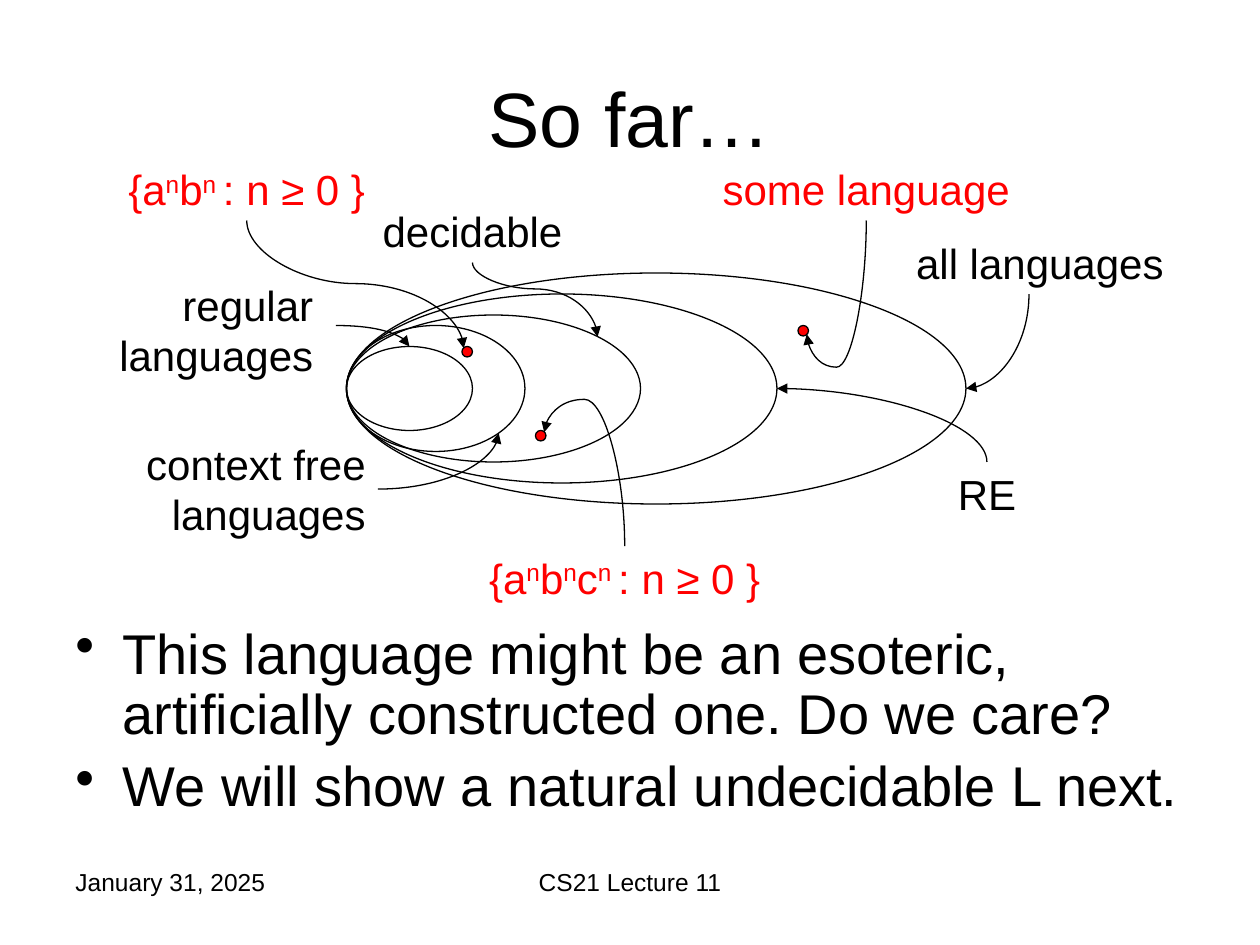
import pptx
import pptx.dml.color
import pptx.enum.shapes
import pptx.enum.text
import pptx.oxml.ns
import pptx.oxml.xmlchemy
import pptx.util

Pt = pptx.util.Pt
qn = pptx.oxml.ns.qn
OxmlElement = pptx.oxml.xmlchemy.OxmlElement
ALIGN = pptx.enum.text.PP_ALIGN
SHAPE = pptx.enum.shapes.MSO_SHAPE
COLORS = {"ink": "000000", "example": "FF0000"}
RGB = {key: pptx.dml.color.RGBColor.from_string(value) for key, value in COLORS.items()}
LINE_WIDTH = Pt(0.75)

deck = pptx.Presentation()
deck.slide_width, deck.slide_height = Pt(720), Pt(540)
slide = deck.slides.add_slide(deck.slide_layouts[6])


def add_text(box, paragraphs, size, align=ALIGN.LEFT, color="ink"):
    """Add a text box; in each paragraph, text between ^ marks is superscript."""
    frame = slide.shapes.add_textbox(*map(Pt, box)).text_frame
    frame.word_wrap = True
    for index, text in enumerate(paragraphs):
        paragraph = frame.paragraphs[0] if index == 0 else frame.add_paragraph()
        paragraph.alignment = align
        paragraph.font.name = "Arial"
        paragraph.font.size = Pt(size)
        paragraph.font.color.rgb = RGB[color]
        for position, piece in enumerate(text.split("^")):
            run = paragraph.add_run()
            run.text = piece
            if position % 2:
                run.font._element.set("baseline", "30000")
    return frame


def add_curved_arrow(start, end, leaves_vertically, bend=None):
    """Draw a quarter curve, or an S curve whose turning point is at bend."""
    (x1, y1), (x2, y2) = start, end
    rotation = 0
    if leaves_vertically:
        # The frame is turned a quarter, so its width and height swap.
        dx, dy = x2 - x1, y2 - y1
        middle_x, middle_y = (x1 + x2) / 2, (y1 + y2) / 2
        rotation = 90 if dx < 0 else 270
        run = dy if rotation == 90 else -dy
        x1, x2 = middle_x - run / 2, middle_x + run / 2
        y1, y2 = middle_y - abs(dx) / 2, middle_y + abs(dx) / 2
    arrow = slide.shapes.add_connector(
        pptx.enum.shapes.MSO_CONNECTOR.CURVE, Pt(x1), Pt(y1), Pt(x2), Pt(y2))
    arrow.line.width = LINE_WIDTH
    arrow.line.color.rgb = RGB["ink"]
    properties = arrow._element.spPr
    if rotation:
        properties.find(qn("a:xfrm")).set("rot", str(rotation * 60000))
    geometry = properties.find(qn("a:prstGeom"))
    if bend is None:
        geometry.set("prst", "curvedConnector2")
    else:
        guide = OxmlElement("a:gd")
        guide.set("name", "adj1")
        guide.set("fmla", f"val {round(bend * 100000)}")
        geometry.find(qn("a:avLst")).append(guide)
    head = OxmlElement("a:tailEnd")
    head.set("type", "triangle")
    properties.find(qn("a:ln")).append(head)
    properties.append(OxmlElement("a:effectLst"))


# Footer, title and bullets
add_text((36, 492, 168, 37.5), ["January 31, 2025"], 14)
add_text((246, 492, 228, 37.5), ["CS21 Lecture 11"], 14, ALIGN.CENTER)
title = add_text((36, 21.6, 648, 90), ["So far…"], 44, ALIGN.CENTER)
title.vertical_anchor = pptx.enum.text.MSO_ANCHOR.MIDDLE

remarks = add_text((36, 354, 648, 128), [
    "This language might be an esoteric, artificially constructed one. Do we care?",
    "We will show a natural undecidable L next.",
], 32)
for remark in remarks.paragraphs:
    remark.line_spacing = 0.9
    remark.space_before = Pt(6.4)
    indents = remark._p.get_or_add_pPr()
    indents.set("marL", str(Pt(27)))
    indents.set("indent", str(-Pt(27)))
    bullet = OxmlElement("a:buChar")
    bullet.set("char", "•")
    indents.insert_element_before(bullet, "a:tabLst", "a:defRPr", "a:extLst")

# Nested language classes share their leftmost point
CLASS_LEFT, CLASS_MIDDLE = 198, 222
for width, height in [(354, 132), (246, 108), (168, 84), (102, 72), (72, 48)]:
    language_class = slide.shapes.add_shape(
        SHAPE.OVAL, Pt(CLASS_LEFT), Pt(CLASS_MIDDLE - height / 2), Pt(width), Pt(height))
    language_class.shadow.inherit = False
    language_class.fill.background()
    language_class.line.color.rgb = RGB["ink"]
    language_class.line.width = LINE_WIDTH

# Example languages inside the classes
for left, top in [(264, 198), (306, 246), (456, 186)]:
    example = slide.shapes.add_shape(SHAPE.OVAL, Pt(left), Pt(top), Pt(6), Pt(6))
    example.shadow.inherit = False
    example.fill.solid()
    example.fill.fore_color.rgb = RGB["example"]
    example.line.color.rgb = RGB["ink"]
    example.line.width = LINE_WIDTH

# Labels
for box, label, align, color in [
    ((54, 156, 132, 65), "regular languages", ALIGN.RIGHT, "ink"),
    ((48, 247, 168, 65), "context free languages", ALIGN.RIGHT, "ink"),
    ((504, 132, 168, 36), "all languages", ALIGN.RIGHT, "ink"),
    ((186, 114, 168, 36), "decidable", ALIGN.CENTER, "ink"),
    ((480, 264, 168, 36), "RE", ALIGN.CENTER, "ink"),
    ((36, 90, 210, 36), "{a^n^b^n ^: n ≥ 0 }", ALIGN.CENTER, "example"),
    ((252, 312, 210, 36), "{a^n^b^n^c^n ^: n ≥ 0 }", ALIGN.CENTER, "example"),
    ((390, 90, 210, 36), "some language", ALIGN.CENTER, "example"),
]:
    add_text(box, [label], 24, align, color)

# Arrows from labels to classes and examples
for start, end, leaves_vertically, bend in [
    ((192, 186), (234, 198), False, None),            # regular
    ((216, 279.5), (285, 247.5), False, None),        # context free
    ((588, 168), (552, 222), True, None),             # all languages
    ((270, 150), (341.5, 192.5), True, 0.355),        # decidable
    ((564, 264), (444, 222), True, None),             # RE
    ((141, 126), (265, 199), True, 0.494),            # a^n b^n
    ((357, 312), (311, 247), True, 1.29),             # a^n b^n c^n
    ((495, 126), (461, 191), True, 1.29),             # some language
]:
    add_curved_arrow(start, end, leaves_vertically, bend)

deck.save("out.pptx")
